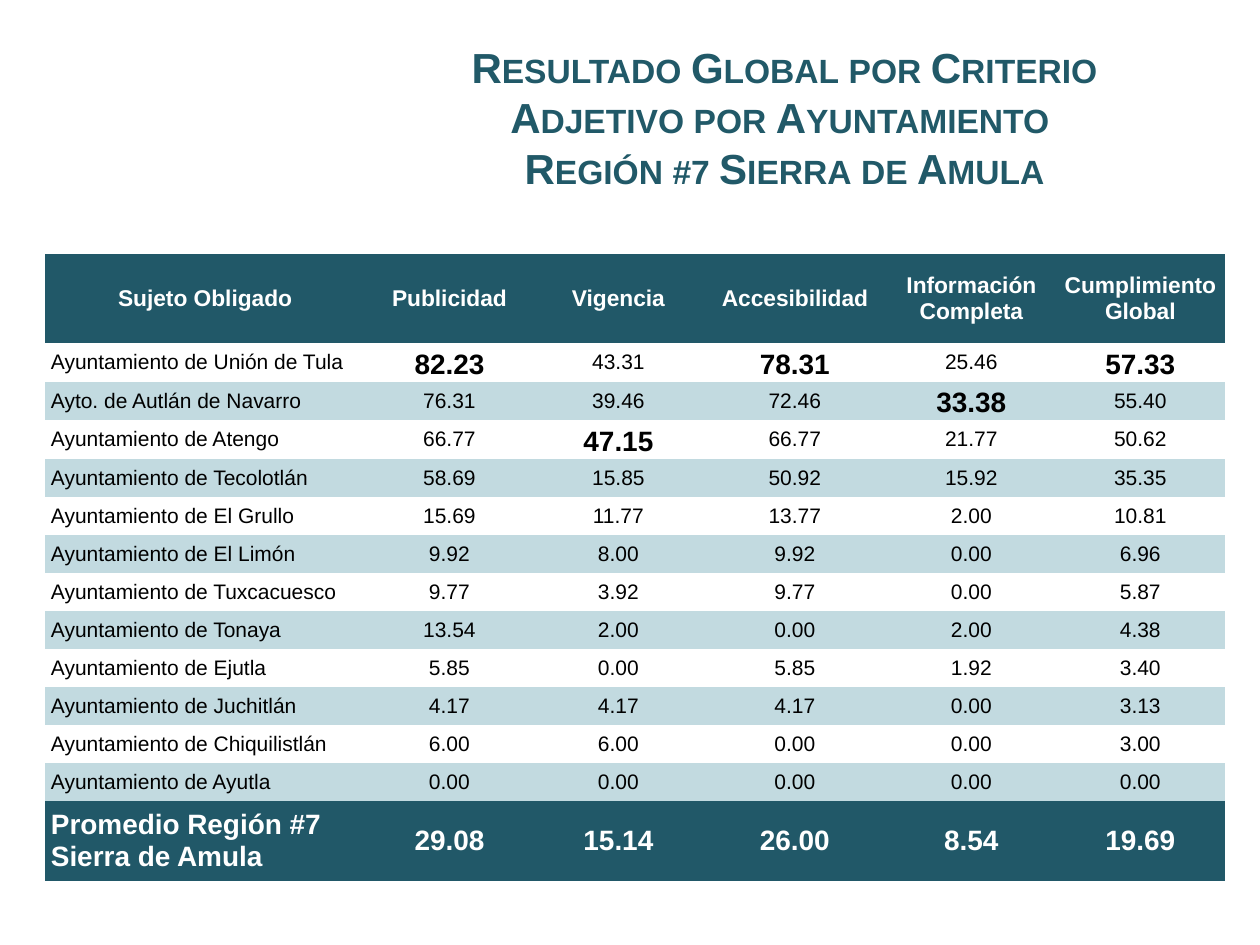
from dataclasses import dataclass

from pptx import Presentation
from pptx.dml.color import RGBColor
from pptx.enum.text import MSO_ANCHOR, PP_ALIGN
from pptx.util import Pt

PX = 914400 / 126


@dataclass(frozen=True)
class Theme:
    font: str = "Arial"
    title_color: str = "215968"
    dark: str = "215868"
    band: str = "C2DAE0"
    ink: str = "000000"
    light: str = "FFFFFF"
    title_size: int = 24
    header_size: int = 13
    body_size: int = 12
    strong_size: int = 16


THEME = Theme()

TITLE = "Resultado Global por Criterio Adjetivo por Ayuntamiento \nRegión #7 Sierra de Amula"
HEADERS = ["Sujeto Obligado", "Publicidad", "Vigencia", "Accesibilidad",
           "Información\nCompleta", "Cumplimiento Global"]
SCORES = [
    ("Ayuntamiento de Unión de Tula", 82.23, 43.31, 78.31, 25.46, 57.33),
    ("Ayto. de Autlán de Navarro", 76.31, 39.46, 72.46, 33.38, 55.40),
    ("Ayuntamiento de Atengo", 66.77, 47.15, 66.77, 21.77, 50.62),
    ("Ayuntamiento de Tecolotlán", 58.69, 15.85, 50.92, 15.92, 35.35),
    ("Ayuntamiento de El Grullo", 15.69, 11.77, 13.77, 2.00, 10.81),
    ("Ayuntamiento de El Limón", 9.92, 8.00, 9.92, 0.00, 6.96),
    ("Ayuntamiento de Tuxcacuesco", 9.77, 3.92, 9.77, 0.00, 5.87),
    ("Ayuntamiento de Tonaya", 13.54, 2.00, 0.00, 2.00, 4.38),
    ("Ayuntamiento de Ejutla", 5.85, 0.00, 5.85, 1.92, 3.40),
    ("Ayuntamiento de Juchitlán", 4.17, 4.17, 4.17, 0.00, 3.13),
    ("Ayuntamiento de Chiquilistlán", 6.00, 6.00, 0.00, 0.00, 3.00),
    ("Ayuntamiento de Ayutla", 0.00, 0.00, 0.00, 0.00, 0.00),
]
AVERAGES = ("Promedio Región #7 Sierra de Amula", 29.08, 15.14, 26.00, 8.54, 19.69)

COLUMN_WIDTHS = [320, 169, 169, 184, 169, 169]
HEADER_HEIGHT, BODY_HEIGHT, AVERAGE_HEIGHT = 89, 38, 80
NO_STYLE = "{2D5ABB26-0587-4C30-8999-92F81FD0307C}"


def px(length):
    return round(length * PX)


def apply(target, values):
    for name, value in values.items():
        setattr(target, name, value)


def write(para, text, size, color, bold, align):
    para.text = text
    para.alignment = align
    for span in para.runs:
        apply(span.font, {"name": THEME.font, "size": Pt(size), "bold": bold})
        span.font.color.rgb = RGBColor.from_string(color)


def add_title(page):
    box = page.shapes.add_textbox(px(372), px(38), px(825), px(158))
    frame = box.text_frame
    apply(frame, {"word_wrap": True, "vertical_anchor": MSO_ANCHOR.MIDDLE})
    para = frame.paragraphs[0]
    write(para, TITLE, THEME.title_size, THEME.title_color, True, PP_ALIGN.CENTER)
    for span in para.runs:
        span._r.get_or_add_rPr().set("cap", "small")


def fill_cell(cell, text, size, color, bold, align, fill):
    apply(cell, {"margin_left": px(6), "margin_right": px(6), "margin_top": 0,
                 "margin_bottom": 0, "vertical_anchor": MSO_ANCHOR.MIDDLE})
    if fill:
        cell.fill.solid()
        cell.fill.fore_color.rgb = RGBColor.from_string(fill)
    else:
        cell.fill.background()
    write(cell.text_frame.paragraphs[0], text, size, color, bold, align)


def fill_row(cells, record, size, color, bold, fill, best=()):
    for index, (cell, value) in enumerate(zip(cells, record)):
        is_best = index > 0 and bool(best) and value == best[index - 1]
        text = value if isinstance(value, str) else f"{value:.2f}"
        is_label = index == 0 and record is not HEADERS
        fill_cell(cell, text, THEME.strong_size if is_best else size, color,
                  bold or is_best, PP_ALIGN.LEFT if is_label else PP_ALIGN.CENTER, fill)
        if is_best:
            cell.text_frame.paragraphs[0].line_spacing = 1.15


def add_score_table(page):
    heights = [HEADER_HEIGHT] + [BODY_HEIGHT] * len(SCORES) + [AVERAGE_HEIGHT]
    frame = page.shapes.add_table(len(heights), len(HEADERS), px(45), px(254),
                                  px(sum(COLUMN_WIDTHS)), px(sum(heights)))
    table = frame.table
    apply(table, {"first_row": False, "horz_banding": False})
    table._tbl.tblPr[0].text = NO_STYLE
    for column, width in zip(table.columns, COLUMN_WIDTHS):
        column.width = px(width)
    for row, height in zip(table.rows, heights):
        row.height = px(height)

    header, *body, footer = [row.cells for row in table.rows]
    best = [max(values) for values in list(zip(*SCORES))[1:]]
    fill_row(header, HEADERS, THEME.header_size, THEME.light, True, THEME.dark)
    for index, (cells, record) in enumerate(zip(body, SCORES)):
        band = THEME.band if index % 2 else None
        fill_row(cells, record, THEME.body_size, THEME.ink, False, band, best)
    fill_row(footer, AVERAGES, THEME.strong_size, THEME.light, True, THEME.dark)


def main():
    deck = Presentation()
    apply(deck, {"slide_width": px(1260), "slide_height": px(945)})
    page = deck.slides.add_slide(deck.slide_layouts[6])
    add_title(page)
    add_score_table(page)
    deck.save("out.pptx")


if __name__ == "__main__":
    main()
